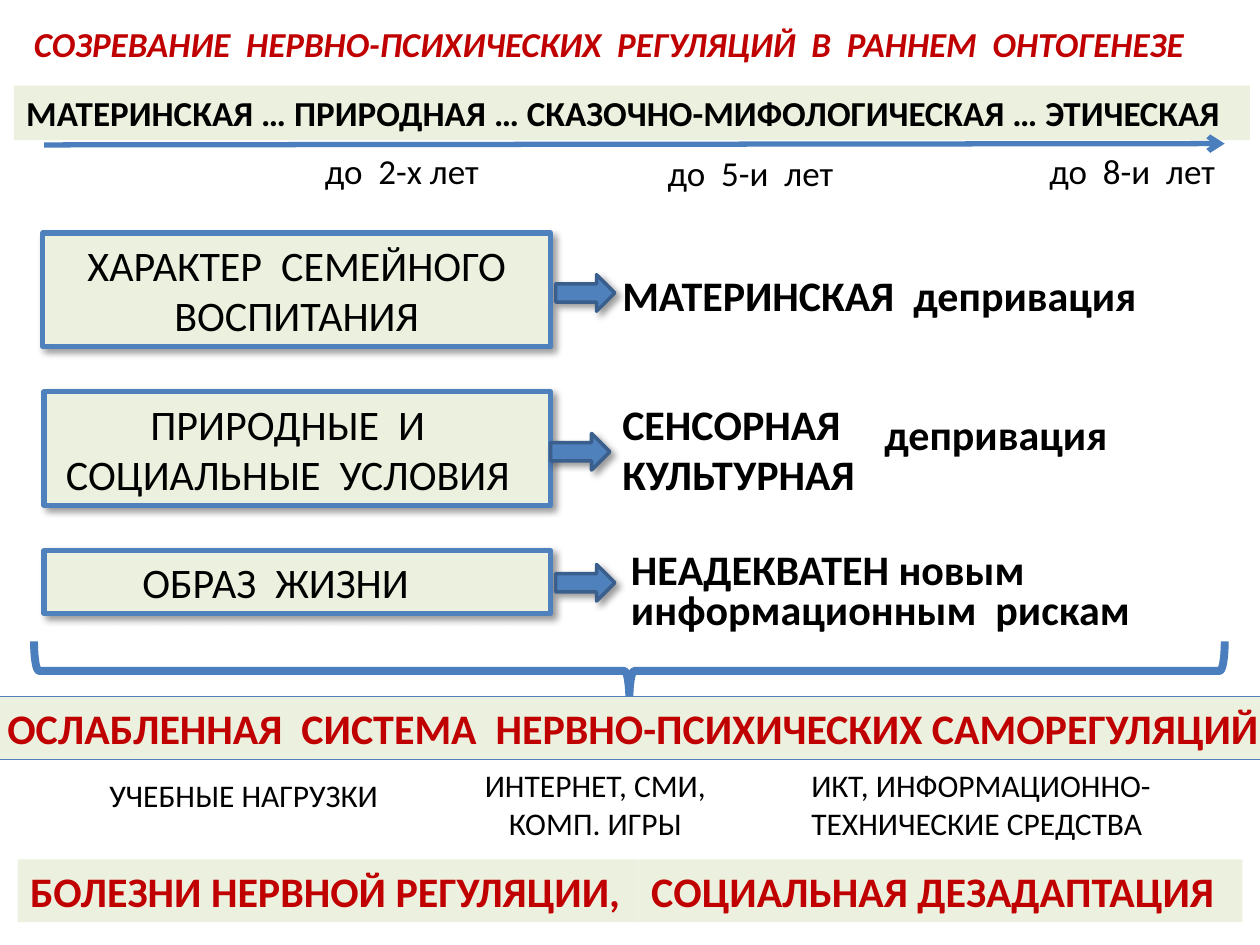
"""Builds a one-slide diagram on the maturing of neuropsychic regulation in early childhood."""
import pptx
import pptx.dml.color
import pptx.enum.shapes
import pptx.enum.text
import pptx.oxml
import pptx.oxml.ns
import pptx.util

COLORS = {"red": "C00000", "black": "000000", "pale": "EBF1DE", "blue": "4F81BD",
          "stroke": "4B7EBC", "edge": "3A5F8C"}
FONT = "Calibri"
COLUMNS, ROWS = 100, 75
LINE_HEIGHT, INSET = 1.2, 0.05

# lines, column, row, width in columns, point size, style
LABELS = [
    (["СОЗРЕВАНИЕ  НЕРВНО-ПСИХИЧЕСКИХ  РЕГУЛЯЦИЙ  В  РАННЕМ  ОНТОГЕНЕЗЕ"],
     1.7, 1.3, 95.3, 20, {"bold": True, "italic": True, "color": "red", "glow": True}),
    (["до  2-х лет"], 24.8, 11.4, 14.3, 20, {}),
    (["до  5-и  лет"], 52, 11.5, 15.9, 20, {}),
    (["до  8-и  лет"], 82.3, 11.4, 15.9, 20, {}),
    (["МАТЕРИНСКАЯ  депривация"], 48.4, 20.9, 43.2, 24, {"bold": True}),
    (["СЕНСОРНАЯ", "КУЛЬТУРНАЯ"], 48.4, 31.1, 22.1, 24, {"bold": True}),
    (["депривация"], 69.2, 31.9, 19.9, 24, {"bold": True}),
    (["НЕАДЕКВАТЕН новым", "информационным  рискам"], 49.1, 43.4, 44.3, 24,
     {"bold": True, "wrap": True, "spacing": 0.8}),
    (["УЧЕБНЫЕ НАГРУЗКИ"], 7.7, 61.1, 23.5, 18, {}),
    (["ИНТЕРНЕТ, СМИ,", "КОМП. ИГРЫ"], 37.4, 60.3, 19.7, 18, {"center": True}),
    (["ИКТ, ИНФОРМАЦИОННО-", "ТЕХНИЧЕСКИЕ СРЕДСТВА"], 63.4, 60.3, 29.2, 18, {}),
]
BANDS = [
    (["МАТЕРИНСКАЯ … ПРИРОДНАЯ … СКАЗОЧНО-МИФОЛОГИЧЕСКАЯ … ЭТИЧЕСКАЯ"],
     1.1, 6.8, 98.1, 20, {"bold": True}),
    (["БОЛЕЗНИ НЕРВНОЙ РЕГУЛЯЦИИ,"], 1.4, 68.2, 49.3, 24, {"bold": True, "color": "red"}),
    (["СОЦИАЛЬНАЯ ДЕЗАДАПТАЦИЯ"], 50.7, 68.2, 47.9, 24, {"bold": True, "color": "red"}),
    (["ОСЛАБЛЕННАЯ  СИСТЕМА  НЕРВНО-ПСИХИЧЕСКИХ САМОРЕГУЛЯЦИЙ"],
     -0.4, 55.3, 102.3, 24, {"bold": True, "color": "red", "line": 0.75}),
]
FRAME = {"wrap": True, "line": 3, "shadow": True}
CAUSES = [
    (["ХАРАКТЕР  СЕМЕЙНОГО", "ВОСПИТАНИЯ"], 3.4, 18.5, 40.3, 24, {**FRAME, "center": True}),
    (["ПРИРОДНЫЕ  И", "СОЦИАЛЬНЫЕ  УСЛОВИЯ"], 3.5, 31.1, 40.2, 24,
     {**FRAME, "center": True, "right": 0.25}),
    (["ОБРАЗ  ЖИЗНИ"], 3.5, 43.7, 40.2, 24, {**FRAME, "left": 0.78}),
]
BLOCK_ARROWS = [(44.1, 21.8), (43.7, 34.4), (44.1, 44.8)]
ARROW_SIZE = (4.7, 2.9)
TIMELINE = (3.5, 11.5, 97.2, 11.4)
BRACE = (47.6, 6, 4.7, 94.5)

deck = pptx.Presentation()
deck.slide_width, deck.slide_height = pptx.util.Inches(10), pptx.util.Inches(7.5)
page = deck.slides.add_slide(deck.slide_layouts[6])
shapes = page.shapes
KINDS = pptx.enum.shapes.MSO_SHAPE


def grid(column, row, *rest):
    """Turn alternating column and row counts into slide lengths."""
    units = (deck.slide_width / COLUMNS, deck.slide_height / ROWS)
    return [int(value * units[i % 2]) for i, value in enumerate((column, row, *rest))]


def rgb(name):
    return pptx.dml.color.RGBColor.from_string(COLORS[name])


def add_effects(properties, shadow):
    """Add an effect list, empty or with one soft diagonal shadow."""
    inner = ('<a:outerShdw blurRad="50800" dist="38100" dir="2700000" algn="tl" rotWithShape="0">'
             '<a:srgbClr val="000000"><a:alpha val="40000"/></a:srgbClr></a:outerShdw>')
    xml = f'<a:effectLst {pptx.oxml.ns.nsdecls("a")}>{inner if shadow else ""}</a:effectLst>'
    effects = pptx.oxml.parse_xml(xml)
    latin = properties.find(pptx.oxml.ns.qn("a:latin"))
    if latin is None:
        properties.append(effects)
    else:
        latin.addprevious(effects)


def add_preset(kind, frame, fill=None, line=None, width=0, shadow=False):
    shape = shapes.add_shape(kind, *frame)
    if fill:
        shape.fill.solid()
        shape.fill.fore_color.rgb = rgb(fill)
    else:
        shape.fill.background()
    if width:
        shape.line.color.rgb = rgb(line)
        shape.line.width = pptx.util.Pt(width)
    else:
        shape.line.fill.background()
    add_effects(shape._element.spPr, shadow)
    return shape


def add_text(lines, column, row, width, size, style, filled=False):
    """Place lines of text in a box whose height follows from its lines."""
    spacing = style.get("spacing", 1)
    height = len(lines) * size * LINE_HEIGHT * spacing / 72 + 2 * INSET
    frame = grid(column, row, width) + [pptx.util.Inches(height)]
    if filled:
        box = add_preset(KINDS.RECTANGLE, frame, "pale", "blue",
                         style.get("line", 0), style.get("shadow", False))
    else:
        box = shapes.add_textbox(*frame)
    text = box.text_frame
    text.text = "\n".join(lines)
    text.word_wrap = style.get("wrap", False)
    text.auto_size = pptx.enum.text.MSO_AUTO_SIZE.SHAPE_TO_FIT_TEXT
    text.vertical_anchor = pptx.enum.text.MSO_ANCHOR.TOP
    text.margin_left = pptx.util.Inches(style.get("left", 0.1))
    text.margin_right = pptx.util.Inches(style.get("right", 0.1))
    align = pptx.enum.text.PP_ALIGN
    for para in text.paragraphs:
        para.alignment = align.CENTER if style.get("center") else align.LEFT
        para.line_spacing = spacing
        para.font.name, para.font.size = FONT, pptx.util.Pt(size)
        para.font.bold = style.get("bold", False)
        para.font.italic = style.get("italic", False)
        para.font.color.rgb = rgb(style.get("color", "black"))
        if style.get("glow"):
            for span in para.runs:
                add_effects(span._r.get_or_add_rPr(), True)


for label in LABELS:
    add_text(*label)
for panel in BANDS[:3] + CAUSES:
    add_text(*panel, filled=True)

timeline = shapes.add_connector(pptx.enum.shapes.MSO_CONNECTOR.STRAIGHT, *grid(*TIMELINE))
timeline.line.color.rgb = rgb("stroke")
timeline.line.width = pptx.util.Pt(3)
timeline.line._get_or_add_ln().append(
    pptx.oxml.parse_xml(f'<a:tailEnd {pptx.oxml.ns.nsdecls("a")} type="arrow"/>'))
add_effects(timeline._element.spPr, False)

brace = add_preset(KINDS.LEFT_BRACE, grid(*BRACE), line="stroke", width=4.5)
brace.rotation = 270
add_text(*BANDS[3], filled=True)
for corner in BLOCK_ARROWS:
    add_preset(KINDS.RIGHT_ARROW, grid(*corner, *ARROW_SIZE), "blue", "edge", 2, True)

deck.save("out.pptx")
